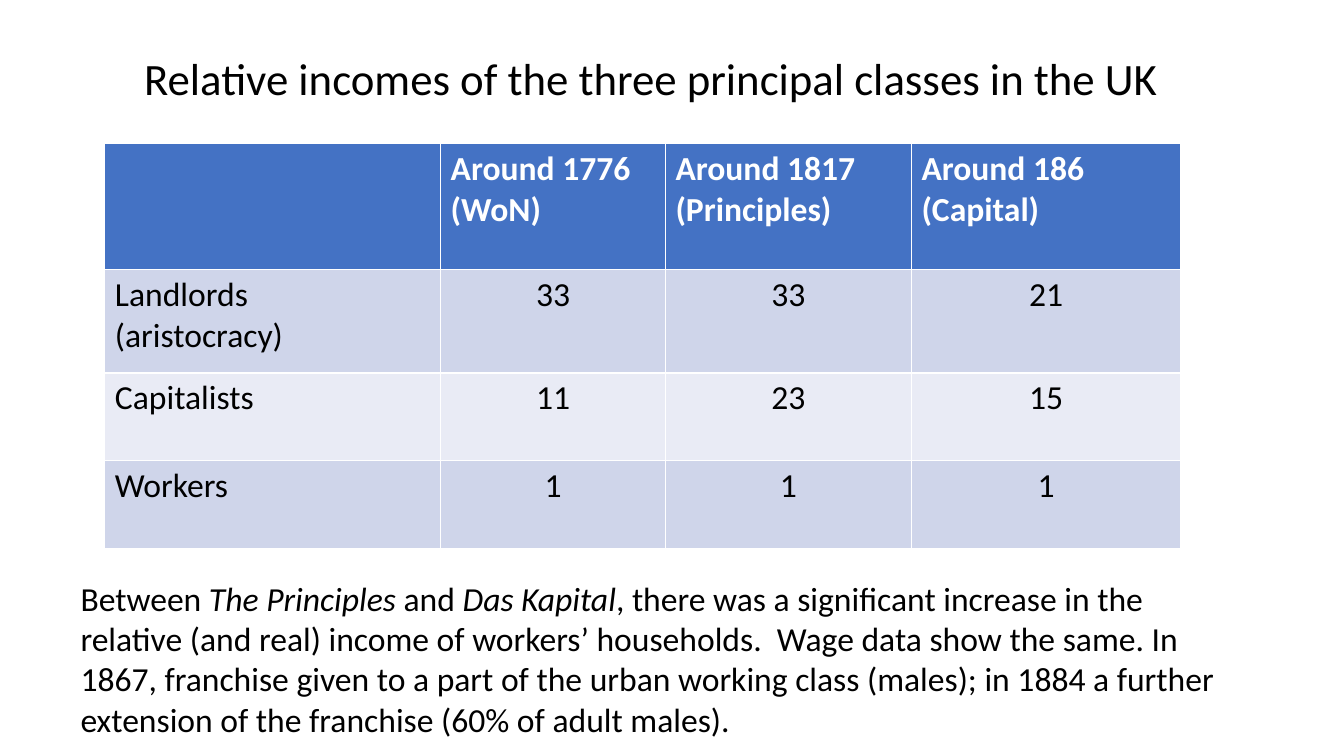
import pptx
import pptx.util
import pptx.dml.color
import pptx.enum.text
from dataclasses import dataclass

Inches = pptx.util.Inches
Align = pptx.enum.text.PP_ALIGN
Anchor = pptx.enum.text.MSO_ANCHOR


@dataclass(frozen=True)
class Theme:
    font: str = "Calibri"
    title_size: int = 32
    body_size: int = 24
    text: str = "000000"
    header_text: str = "FFFFFF"
    header_fill: str = "4472C4"
    bands: tuple = ("CFD5EA", "E9EBF5")


theme = Theme()

# Content: each cell is a list of lines, each comment part is (text, italic)
title_text = "Relative incomes of the three principal classes in the UK"
income_rows = [
    [[], ["Around 1776", "(WoN)"], ["Around 1817", "(Principles)"], ["Around 186", "(Capital)"]],
    [["Landlords", "(aristocracy)"], ["33"], ["33"], ["21"]],
    [["Capitalists"], ["11"], ["23"], ["15"]],
    [["Workers"], ["1"], ["1"], ["1"]],
]
column_widths = [3.33, 2.23, 2.44, 2.67]
row_heights = [1.25, 1.03, 0.87, 0.87]
comment_parts = [
    ("Between ", False),
    ("The Principles ", True),
    ("and ", False),
    ("Das Kapital", True),
    (", there was a significant increase in the relative (and real) income of "
     "workers’ households.  Wage data show the same. In 1867, franchise given to "
     "a part of the urban working class (males); in 1884 a further extension of "
     "the franchise (60% of adult males).", False),
]


def rgb(code):
    return pptx.dml.color.RGBColor.from_string(code)


def add_span(para, text, size=theme.body_size, color=theme.text, bold=False, italic=False):
    span = para.add_run()
    span.text = text
    font = span.font
    font.name, font.size = theme.font, pptx.util.Pt(size)
    font.bold, font.italic = bold, italic
    font.color.rgb = rgb(color)


def place(box, left, top, width, height):
    box.left, box.top = Inches(left), Inches(top)
    box.width, box.height = Inches(width), Inches(height)


deck = pptx.Presentation()
deck.slide_width, deck.slide_height = Inches(13.33), Inches(7.5)
page = deck.slides.add_slide(deck.slide_layouts.get_by_name("Title Only"))

# Title
title = page.shapes.title
place(title, 0.5, 0.4, 11.92, 0.8)
title.text_frame.vertical_anchor = Anchor.MIDDLE
title_para = title.text_frame.paragraphs[0]
title_para.alignment = Align.CENTER
title_para.line_spacing = 0.9
add_span(title_para, title_text, size=theme.title_size)

# Income table; its built-in style draws the white rules
table = page.shapes.add_table(
    len(income_rows), len(column_widths), Inches(1.04), Inches(1.42),
    Inches(sum(column_widths)), Inches(sum(row_heights))).table
for column, width in zip(table.columns, column_widths):
    column.width = Inches(width)
for row, height in zip(table.rows, row_heights):
    row.height = Inches(height)

for r, cells in enumerate(income_rows):
    header = r == 0
    fill = theme.header_fill if header else theme.bands[(r - 1) % 2]
    color = theme.header_text if header else theme.text
    for c, lines in enumerate(cells):
        cell = table.cell(r, c)
        cell.fill.solid()
        cell.fill.fore_color.rgb = rgb(fill)
        frame = cell.text_frame
        for n, line in enumerate(lines):
            para = frame.add_paragraph() if n else frame.paragraphs[0]
            para.alignment = Align.LEFT if header or c == 0 else Align.CENTER
            add_span(para, line, color=color, bold=header)

# Comment below the table
comment = page.shapes.add_textbox(Inches(0.7), Inches(5.68), Inches(11.52), Inches(1.72))
comment.text_frame.word_wrap = True
comment_para = comment.text_frame.paragraphs[0]
for text, italic in comment_parts:
    add_span(comment_para, text, italic=italic)

deck.save("out.pptx")
